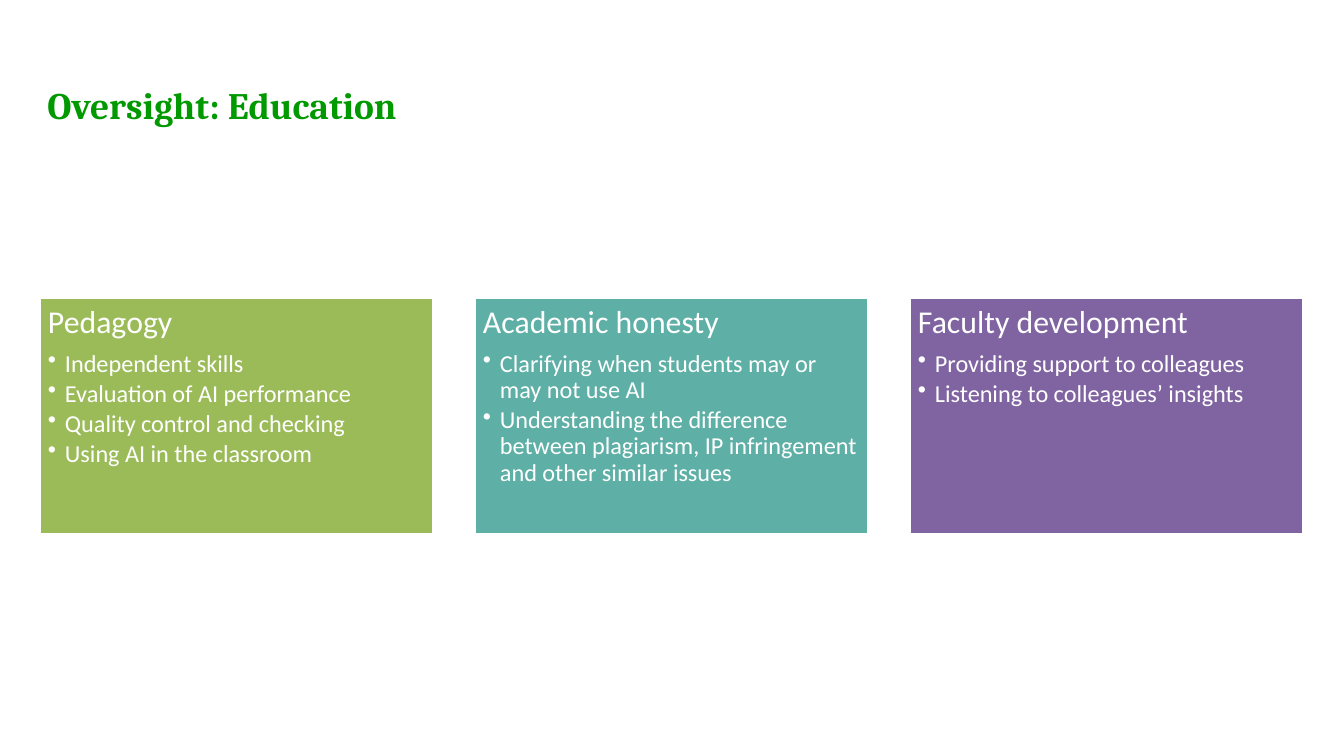
from lxml.etree import SubElement
from pptx import Presentation
from pptx.dml.color import RGBColor
from pptx.enum.shapes import MSO_SHAPE as Shape
from pptx.enum.text import MSO_ANCHOR as Anchor, MSO_AUTO_SIZE as Fit, PP_ALIGN as Align
from pptx.oxml.ns import qn
from pptx.util import Pt

SCALE = 9144000 / 1344
WHITE = "FFFFFF"
LEFT, TOP, WIDTH, HEIGHT, STEP = 39, 297, 395, 238, 435
CARDS = [
    ("Pedagogy", "9BBB59", [
        "Independent skills",
        "Evaluation of AI performance",
        "Quality control and checking",
        "Using AI in the classroom",
    ]),
    ("Academic honesty", "5EAFA6", [
        "Clarifying when students may or may not use AI",
        "Understanding the difference between plagiarism, "
        "IP infringement and other similar issues",
    ]),
    ("Faculty development", "8064A2", [
        "Providing support to colleagues",
        "Listening to colleagues’ insights",
    ]),
]


def px(n):
    """Turn pixels into EMU."""
    return round(n * SCALE)


def color(code):
    """Turn a hex string into a colour."""
    return RGBColor.from_string(code)


def write(para, text, size=13, font="Calibri", fill=WHITE, bold=False,
          after=0, lines=None, bullet=False):
    """Fill a paragraph with formatted text."""
    if bullet:
        props = para._p.get_or_add_pPr()
        props.set("marL", str(px(17)))
        props.set("indent", str(px(-17)))
        SubElement(props, qn("a:buChar"), char="•")
    para.alignment = Align.LEFT
    para.space_before, para.space_after = Pt(0), Pt(after)
    para.line_spacing = lines
    run = para.add_run()
    run.text = text
    run.font.size, run.font.name, run.font.bold = Pt(size), font, bold
    run.font.color.rgb = color(fill)


def add_title(slide, text):
    """Place and format the slide title."""
    title = slide.shapes.title
    title.left, title.top, title.width, title.height = map(px, (34, 75, 964, 101))
    frame = title.text_frame
    frame.auto_size, frame.vertical_anchor = Fit.NONE, Anchor.TOP
    write(frame.paragraphs[0], text, size=20, font="Cambria", fill="009900", bold=True)


def add_card(slide, left, head, fill, items):
    """Draw a filled card with a heading and a bulleted list."""
    card = slide.shapes.add_shape(Shape.RECTANGLE, *map(px, (left, TOP, WIDTH, HEIGHT)))
    card.shadow.inherit = False
    card.fill.solid()
    card.fill.fore_color.rgb = color(fill)
    card.line.color.rgb = color(WHITE)
    card.line.width = Pt(2)
    frame = card.text_frame
    frame.word_wrap, frame.vertical_anchor = True, Anchor.TOP
    frame.margin_left = frame.margin_right = px(9)
    frame.margin_top = frame.margin_bottom = px(9)
    write(frame.paragraphs[0], head, size=17, after=6, lines=0.9)
    for item in items:
        write(frame.add_paragraph(), item, after=2, lines=0.9, bullet=True)


def main():
    """Build the slide and save it."""
    deck = Presentation()
    deck.slide_width, deck.slide_height = px(1344), px(756)
    slide = deck.slides.add_slide(deck.slide_layouts[5])
    add_title(slide, "Oversight: Education")
    for i, card in enumerate(CARDS):
        add_card(slide, LEFT + i * STEP, *card)
    deck.save("out.pptx")


if __name__ == "__main__":
    main()
